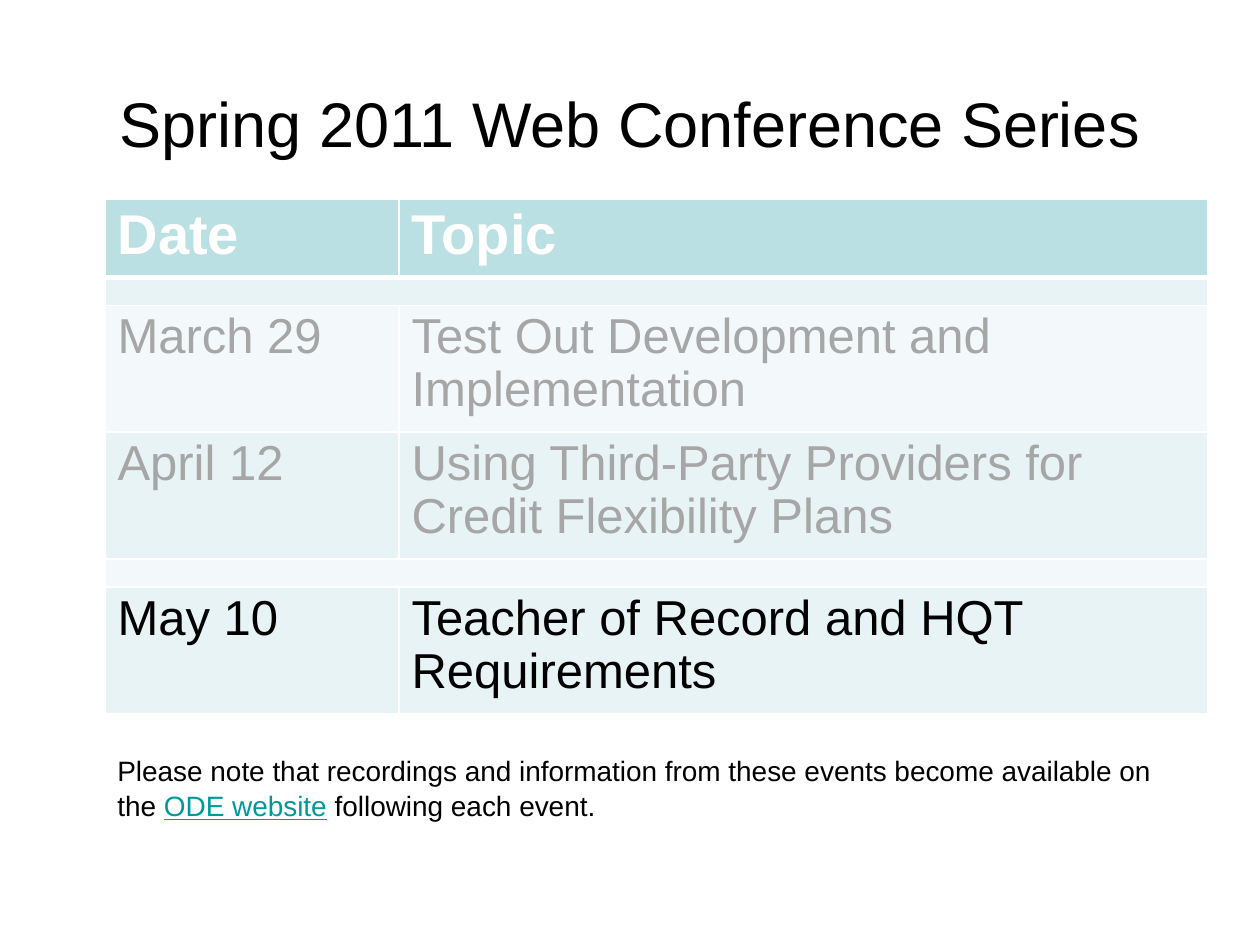
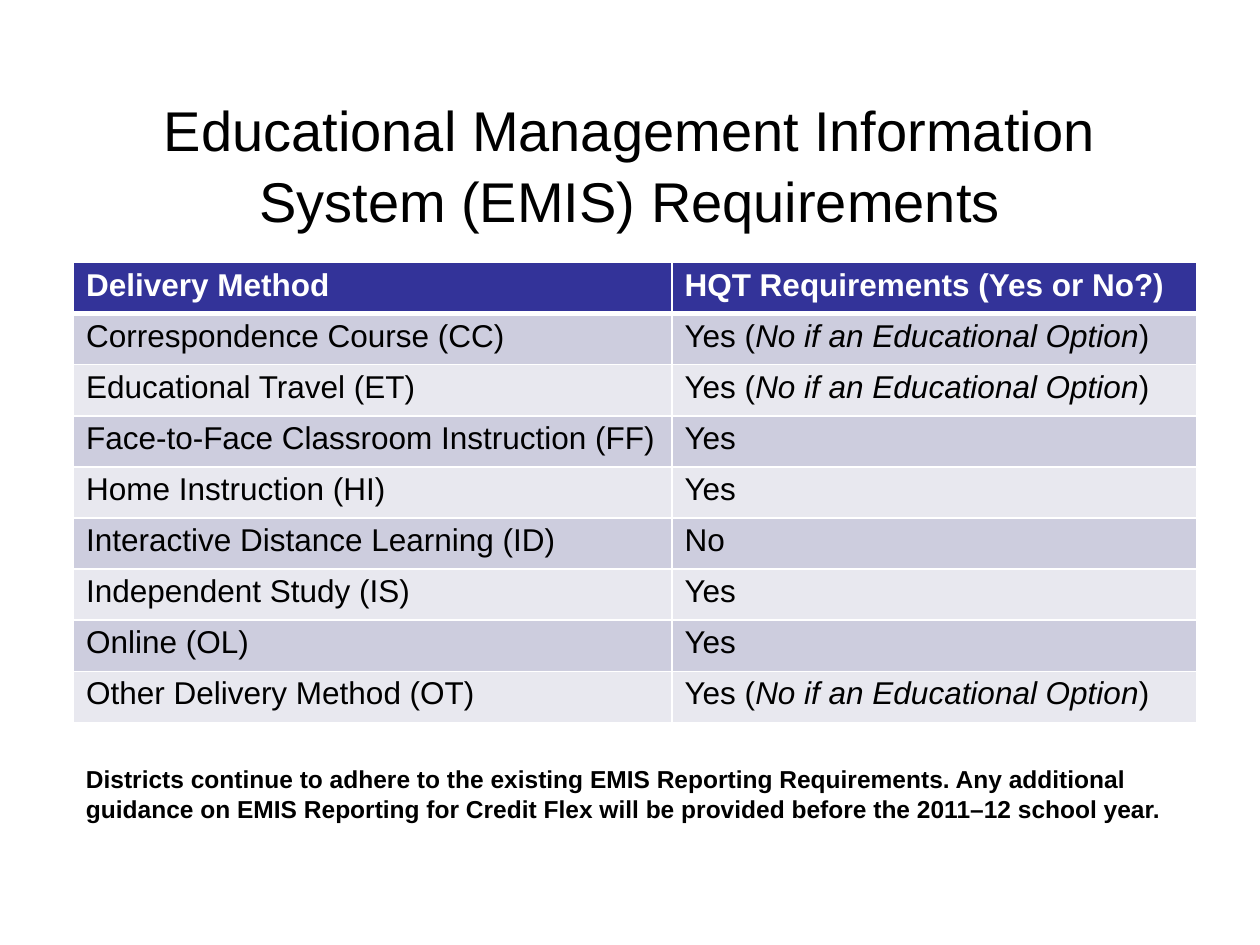
from lxml import etree
from pptx import Presentation
from pptx.dml.color import RGBColor
from pptx.enum.text import MSO_ANCHOR, PP_ALIGN
from pptx.oxml.ns import qn
from pptx.util import Pt

MIDDLE, TOP = MSO_ANCHOR.MIDDLE, MSO_ANCHOR.TOP
CENTER, LEFT = PP_ALIGN.CENTER, PP_ALIGN.LEFT

FONT = "Arial"
HEX = {
    "black": "000000", "white": "FFFFFF", "gray": "A6A6A6", "link": "009999",
    "aqua": "BBE0E3", "aqua_mid": "E7F3F4", "aqua_pale": "F3F9FA",
    "navy": "333399", "navy_mid": "CDCDDE", "navy_pale": "E8E8EF",
}

# Content: a text is a list of runs, each (words, format values)
PAST = {"color": "gray"}
BLANK = []
YES, NO = [("Yes", {})], [("No", {})]
OPTION = [("Yes (", {}), ("No if an Educational Option", {"italic": True}), (")", {})]

SERIES = [
    [[("Date", {})], [("Topic", {})]],
    BLANK,
    [[("March 29", PAST)], [("Test Out Development and Implementation", PAST)]],
    [[("April 12", PAST)],
     [("Using Third-Party Providers for Credit Flexibility Plans", PAST)]],
    BLANK,
    [[("May 10", {})], [("Teacher of Record and HQT Requirements", {})]],
]
METHODS = [
    ("Correspondence Course (CC)", OPTION),
    ("Educational Travel (ET)", OPTION),
    ("Face-to-Face Classroom Instruction (FF)", YES),
    ("Home Instruction (HI)", YES),
    ("Interactive Distance Learning (ID)", NO),
    ("Independent Study (IS)", YES),
    ("Online (OL)", YES),
    ("Other Delivery Method (OT)", OPTION),
]
NEEDS = [[[("Delivery Method", {})], [("HQT Requirements (Yes or No?)", {})]]]
NEEDS += [[[(name, {})], reply] for name, reply in METHODS]

SLIDES = [
    {
        "title": "Spring 2011 Web Conference Series",
        "title_top": 24, "title_size": 36,
        "rows": SERIES, "left": 60, "top": 114, "cols": (168, 462),
        "head_high": 42.8, "row_high": 69.7, "blank_high": 16,
        "head_size": 32, "row_size": 28, "hue": "aqua",
        "note": [
            ("Please note that recordings and information from these events "
             "become available on the ", {}),
            ("ODE website", {"color": "link", "underline": True}),
            (" following each event.", {}),
        ],
        "note_box": (60, 426, 618, 46), "note_size": 16, "note_bold": False,
    },
    {
        "title": "Educational Management Information System (EMIS) Requirements",
        "title_top": 48, "title_size": 32,
        "rows": NEEDS, "left": 42, "top": 150, "cols": (342, 300),
        "head_high": 29.2, "row_high": 29.2, "blank_high": 16,
        "head_size": 18, "row_size": 18, "hue": "navy",
        "note": [
            ("Districts continue to adhere to the existing EMIS Reporting "
             "Requirements. Any additional guidance on EMIS Reporting for "
             "Credit Flex will be provided before the 2011–12 school year.", {}),
        ],
        "note_box": (42, 432, 630, 41), "note_size": 14, "note_bold": True,
    },
]


def shade(name):
    return RGBColor.from_string(HEX[name])


def write(frame, runs, space, **base):
    """Fill the first paragraph with runs that share the base format."""
    para = frame.paragraphs[0]
    para.line_spacing = space
    for words, extra in runs:
        run = para.add_run()
        run.text = words
        look = {"name": FONT, "color": "black", **base, **extra}
        run.font.color.rgb = shade(look.pop("color"))
        for key, value in look.items():
            setattr(run.font, key, value)
    return para


def add_text(slide, box, runs, anchor=TOP, align=LEFT, **base):
    frame = slide.shapes.add_textbox(*map(Pt, box)).text_frame
    frame.word_wrap = True
    frame.vertical_anchor = anchor
    write(frame, runs, 1.05, **base).alignment = align


def edge(cell, widths):
    """Draw white borders ahead of the cell's fill."""
    props = cell._tc.get_or_add_tcPr()
    for spot, (side, width) in enumerate(widths.items()):
        line = etree.Element(qn("a:ln" + side), w=str(Pt(width)))
        fill = etree.SubElement(line, qn("a:solidFill"))
        etree.SubElement(fill, qn("a:srgbClr"), val=HEX["white"])
        props.insert(spot, line)


def add_grid(slide, data):
    rows, cols, hue = data["rows"], data["cols"], data["hue"]
    highs = [data["head_high"]]
    highs += [data["row_high"] if row else data["blank_high"] for row in rows[1:]]
    box = (data["left"], data["top"], sum(cols), sum(highs))
    grid = slide.shapes.add_table(len(rows), len(cols), *map(Pt, box)).table
    for col, width in zip(grid.columns, cols):
        col.width = Pt(width)

    for r, (row, high) in enumerate(zip(rows, highs)):
        grid.rows[r].height = Pt(high)
        head = r == 0
        tint = hue if head else hue + ("_mid" if r % 2 else "_pale")
        for c in range(len(cols)):
            cell = grid.cell(r, c)
            cell.fill.solid()
            cell.fill.fore_color.rgb = shade(tint)
            edge(cell, {"L": 1, "R": 1, "T": 3 if r == 1 else 1, "B": 3 if head else 1})
            if row:
                write(cell.text_frame, row[c], 0.97, bold=head,
                      size=Pt(data["head_size" if head else "row_size"]),
                      color="white" if head else "black")
            else:
                # Small type keeps the divider row thin
                para = cell.text_frame.paragraphs[0]._p
                etree.SubElement(para, qn("a:endParaRPr"), sz="700")
        if not row:
            grid.cell(r, 0).merge(grid.cell(r, len(cols) - 1))


def main():
    deck = Presentation()
    deck.slide_width, deck.slide_height = Pt(720), Pt(540)
    for data in SLIDES:
        slide = deck.slides.add_slide(deck.slide_layouts[6])
        add_text(slide, (54, data["title_top"], 612, 90), [(data["title"], {})],
                 MIDDLE, CENTER, size=Pt(data["title_size"]))
        add_grid(slide, data)
        add_text(slide, data["note_box"], data["note"],
                 size=Pt(data["note_size"]), bold=data["note_bold"])
    deck.save("out.pptx")


if __name__ == "__main__":
    main()
